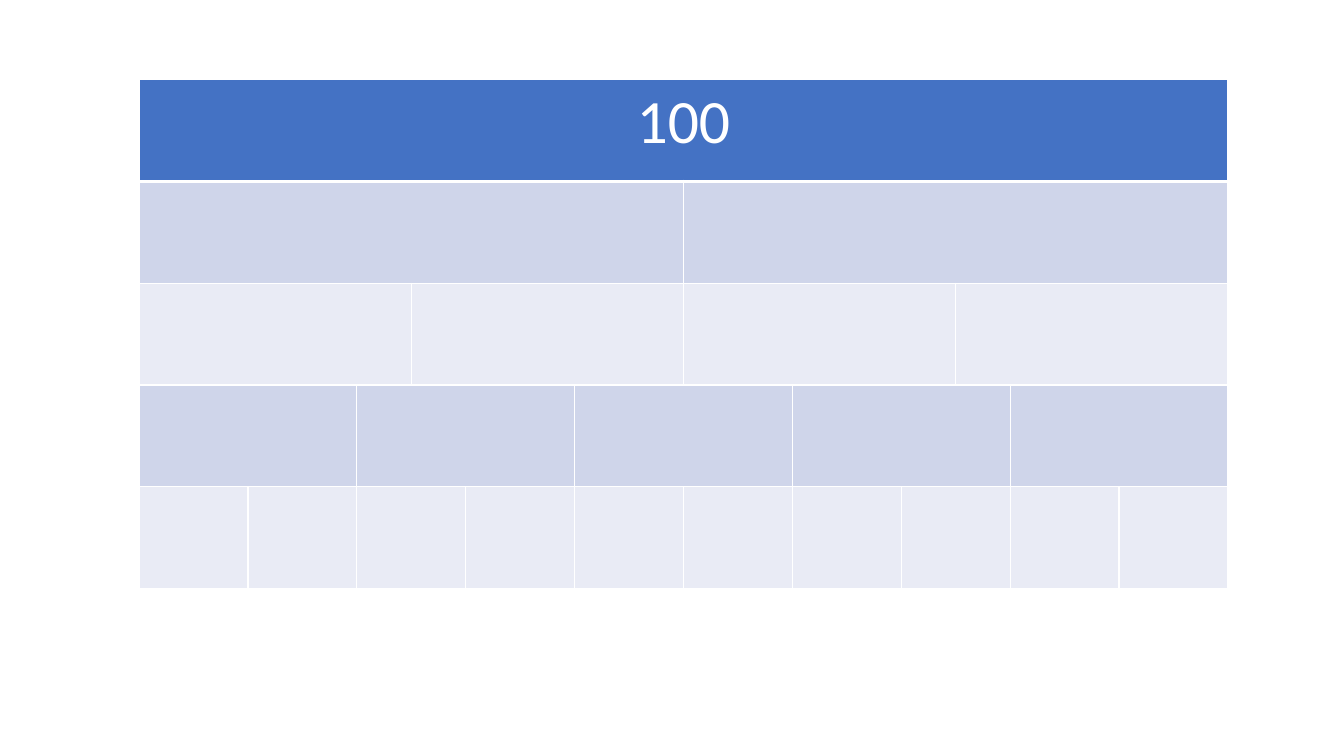
"""Build a slide with a bar table that splits 100 into equal parts."""
from lxml.etree import SubElement
from pptx import Presentation
from pptx.dml.color import RGBColor
from pptx.enum.text import PP_ALIGN
from pptx.oxml.ns import qn
from pptx.util import Pt

EMU_PER_PX = 9144
COLORS = {"whole": "4472C4", "dark_band": "CFD5EA", "light_band": "E9EBF5", "white": "FFFFFF"}
PARTS_PER_ROW = [1, 2, 4, 5, 10]
UNITS = 20
UNIT_WIDTH = 54
ROW_HEIGHT = 101
TABLE_LEFT, TABLE_TOP = 138, 79


def px(length):
    return length * EMU_PER_PX


def part_edges(parts):
    return range(0, UNITS + 1, UNITS // parts)


def band_color(row):
    if row == 0:
        return COLORS["whole"]
    return COLORS["dark_band"] if row % 2 else COLORS["light_band"]


def add_border(cell, side, points):
    border = SubElement(cell._tc.get_or_add_tcPr(), qn(f"a:ln{side}"), w=str(Pt(points)))
    paint = SubElement(border, qn("a:solidFill"))
    SubElement(paint, qn("a:srgbClr"), val=COLORS["white"])


def style_cell(cell, row):
    for side in "LRTB":
        add_border(cell, side, 3 if row == 0 and side == "B" else 1)
    cell.fill.solid()
    cell.fill.fore_color.rgb = RGBColor.from_string(band_color(row))


def write_total(cell, total):
    paragraph = cell.text_frame.paragraphs[0]
    paragraph.alignment = PP_ALIGN.CENTER
    run = paragraph.add_run()
    run.text = total
    run.font.name = "Calibri"
    run.font.size = Pt(44)
    run.font.bold = False
    run.font.color.rgb = RGBColor.from_string(COLORS["white"])


def add_bar_table(slide):
    edges = sorted({edge for parts in PARTS_PER_ROW for edge in part_edges(parts)})
    bars = slide.shapes.add_table(
        len(PARTS_PER_ROW), len(edges) - 1, px(TABLE_LEFT), px(TABLE_TOP),
        px(UNITS * UNIT_WIDTH), px(len(PARTS_PER_ROW) * ROW_HEIGHT)).table
    for column, start, end in zip(bars.columns, edges, edges[1:]):
        column.width = px((end - start) * UNIT_WIDTH)
    for row, parts in enumerate(PARTS_PER_ROW):
        bars.rows[row].height = px(ROW_HEIGHT)
        starts = [edges.index(edge) for edge in part_edges(parts)]
        for first, following in zip(starts, starts[1:]):
            if following - first > 1:
                bars.cell(row, first).merge(bars.cell(row, following - 1))
        for cell in bars.rows[row].cells:
            style_cell(cell, row)
    return bars


def main():
    presentation = Presentation()
    presentation.slide_width = px(1333)
    presentation.slide_height = px(750)
    slide = presentation.slides.add_slide(presentation.slide_layouts[6])
    bars = add_bar_table(slide)
    write_total(bars.cell(0, 0), "100")
    presentation.save("out.pptx")


if __name__ == "__main__":
    main()
